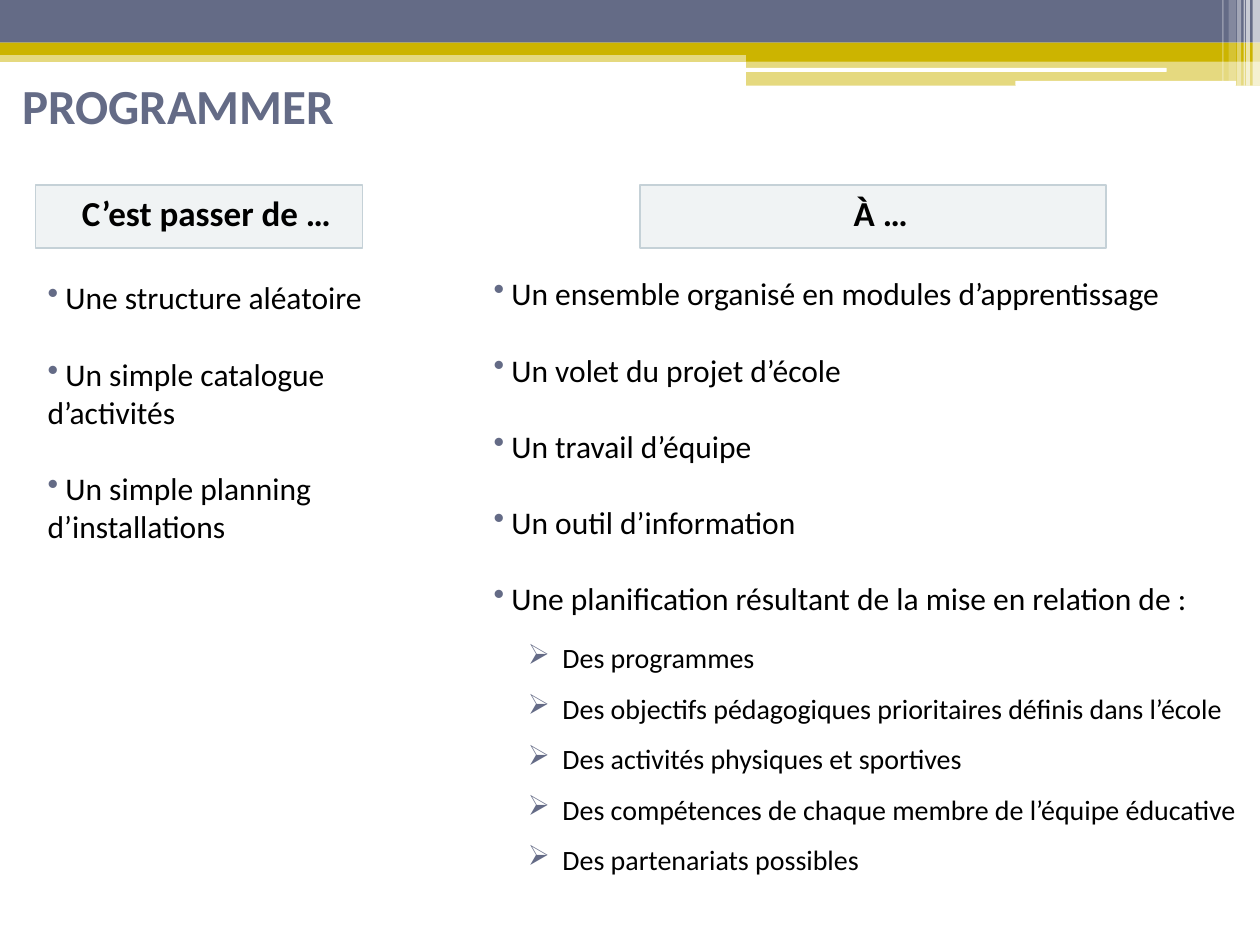
from dataclasses import dataclass

from lxml import etree
from pptx import Presentation
from pptx.dml.color import RGBColor
from pptx.enum import shapes, text
from pptx.oxml import ns
from pptx.util import Cm, Pt


@dataclass(frozen=True)
class Theme:
    font: str = "Calibri"
    slate: str = "646B86"
    gold: str = "CCB400"
    mist: str = "C5D1D7"
    white: str = "FFFFFF"
    black: str = "000000"
    title_size: int = 28
    heading_size: int = 20
    body_size: int = 18
    detail_size: int = 16
    blank_line: int = 22


THEME = Theme()

# left, top, width, height, colour, opacity in percent, rounded
BANNER_BARS = [
    (0, 1.02, 25.4, 0.23, THEME.gold, 50, False),
    (0, 0, 25.4, 0.86, THEME.slate, 100, False),
    (0, 0.86, 25.4, 0.25, THEME.gold, 100, False),
    (15.04, 0.99, 10.36, 0.25, THEME.gold, 100, False),
    (15.04, 1.22, 10.36, 0.51, THEME.gold, 50, False),
    (15.01, 1.37, 8.51, 0.08, THEME.white, 100, True),
    (20.47, 1.63, 4.45, 0.1, THEME.white, 100, True),
]
# left, width, height, opacity in percent
BANNER_STRIPES = [
    (25.25, 0.15, 1.73, 65),
    (25.12, 0.08, 1.73, 65),
    (25.07, 0.03, 1.73, 60),
    (24.94, 0.08, 1.73, 40),
    (24.77, 0.15, 1.63, 20),
    (24.64, 0.03, 1.63, 30),
]

# Each item is a list of lines
STARTING_POINTS = [
    ["Une structure aléatoire"],
    ["Un simple catalogue", "d’activités"],
    ["Un simple planning", "d’installations"],
]
GOALS = [
    "Un ensemble organisé en modules d’apprentissage",
    "Un volet du projet d’école",
    "Un travail d’équipe",
    "Un outil d’information",
    "Une planification résultant de la mise en relation de :",
]
PLANNING_SOURCES = [
    "Des programmes",
    "Des objectifs pédagogiques prioritaires définis dans l’école",
    "Des activités physiques et sportives",
    "Des compétences de chaque membre de l’équipe éducative",
    "Des partenariats possibles",
]


def add_block(slide, box, colour, opacity=100, rounded=False):
    kind = shapes.MSO_SHAPE.ROUNDED_RECTANGLE if rounded else shapes.MSO_SHAPE.RECTANGLE
    shape = slide.shapes.add_shape(kind, *map(Cm, box))
    shape.shadow.inherit = False
    shape.line.fill.background()
    shape.fill.solid()
    shape.fill.fore_color.rgb = RGBColor.from_string(colour)
    if opacity < 100:
        colour_node = shape.fill._xPr.find(".//" + ns.qn("a:srgbClr"))
        etree.SubElement(colour_node, ns.qn("a:alpha"), val=str(opacity * 1000))
    return shape


def add_run(paragraph, words, size, colour=THEME.black, bold=False):
    run = paragraph.add_run()
    run.text = words
    run.font.name = THEME.font
    run.font.size = Pt(size)
    run.font.bold = bold
    run.font.color.rgb = RGBColor.from_string(colour)


def set_indent(paragraph, margin, hanging):
    properties = paragraph._p.get_or_add_pPr()
    properties.set("marL", str(Cm(margin)))
    properties.set("indent", str(-Cm(hanging)))
    return properties


def set_bullet(paragraph, character, margin, hanging):
    properties = set_indent(paragraph, margin, hanging)
    colour_node = etree.SubElement(properties, ns.qn("a:buClr"))
    etree.SubElement(colour_node, ns.qn("a:srgbClr"), val=THEME.slate)
    etree.SubElement(properties, ns.qn("a:buChar"), char=character)


def next_paragraph(frame):
    """Return the empty first paragraph, or a new one once it is used."""
    first = frame.paragraphs[0]
    return frame.add_paragraph() if first.runs else first


def add_item(frame, words, gap=0):
    paragraph = next_paragraph(frame)
    paragraph.space_before = Pt(gap)
    set_bullet(paragraph, "•", 0.36, 0.36)
    add_run(paragraph, words, THEME.body_size)


def add_banner(slide, left, top):
    for x, y, width, height, colour, opacity, rounded in BANNER_BARS:
        add_block(slide, (left + x, top + y, width, height), colour, opacity, rounded)
    for x, width, height, opacity in BANNER_STRIPES:
        add_block(slide, (left + x, top, width, height), THEME.white, opacity)


def add_title(slide, box, words):
    frame = slide.shapes.add_textbox(*map(Cm, box)).text_frame
    frame.word_wrap = True
    frame.vertical_anchor = text.MSO_ANCHOR.MIDDLE
    add_run(frame.paragraphs[0], words, THEME.title_size, THEME.slate, bold=True)


def add_heading(slide, box, words):
    shape = add_block(slide, box, THEME.mist, opacity=25)
    shape.line.color.rgb = RGBColor.from_string(THEME.mist)
    shape.line.width = Pt(0.75)
    frame = shape.text_frame
    frame.vertical_anchor = text.MSO_ANCHOR.TOP
    paragraph = frame.paragraphs[0]
    paragraph.alignment = text.PP_ALIGN.CENTER
    paragraph.space_before = Pt(3)
    set_indent(paragraph, 1.02, 0.71)
    add_run(paragraph, words, THEME.heading_size, bold=True)


def add_starting_points(slide, box):
    frame = slide.shapes.add_textbox(*map(Cm, box)).text_frame
    frame.word_wrap = False
    frame.auto_size = text.MSO_AUTO_SIZE.SHAPE_TO_FIT_TEXT
    for index, (opening, *continuation) in enumerate(STARTING_POINTS):
        add_item(frame, opening, THEME.blank_line if index else 0)
        for line in continuation:
            add_run(frame.add_paragraph(), line, THEME.body_size)


def add_goals(slide, box):
    frame = slide.shapes.add_textbox(*map(Cm, box)).text_frame
    frame.word_wrap = True
    frame.auto_size = text.MSO_AUTO_SIZE.SHAPE_TO_FIT_TEXT
    frame.margin_top = Cm(0.2)
    for index, goal in enumerate(GOALS):
        add_item(frame, goal, THEME.blank_line if index else 0)
    for index, source in enumerate(PLANNING_SOURCES):
        paragraph = frame.add_paragraph()
        paragraph.level = 1
        paragraph.line_spacing = 1.5
        paragraph.space_before = Pt(0 if index else 4)
        set_bullet(paragraph, "➢", 1.39, 0.7)
        add_run(paragraph, source, THEME.detail_size)


def main():
    presentation = Presentation()
    presentation.slide_width, presentation.slide_height = Cm(25.4), Cm(19.05)
    slide = presentation.slides.add_slide(presentation.slide_layouts[6])
    add_banner(slide, 0, 0)
    add_title(slide, (0.2, 0.74, 15.09, 2.74), "PROGRAMMER")
    add_starting_points(slide, (0.71, 5.49, 6.86, 5.64))
    add_heading(slide, (0.71, 3.73, 6.6, 1.27), "C’est passer de …")
    add_heading(slide, (12.9, 3.73, 9.4, 1.27), "À …")
    add_goals(slide, (9.7, 5.33, 15.6, 13.54))
    presentation.save("out.pptx")


if __name__ == "__main__":
    main()
